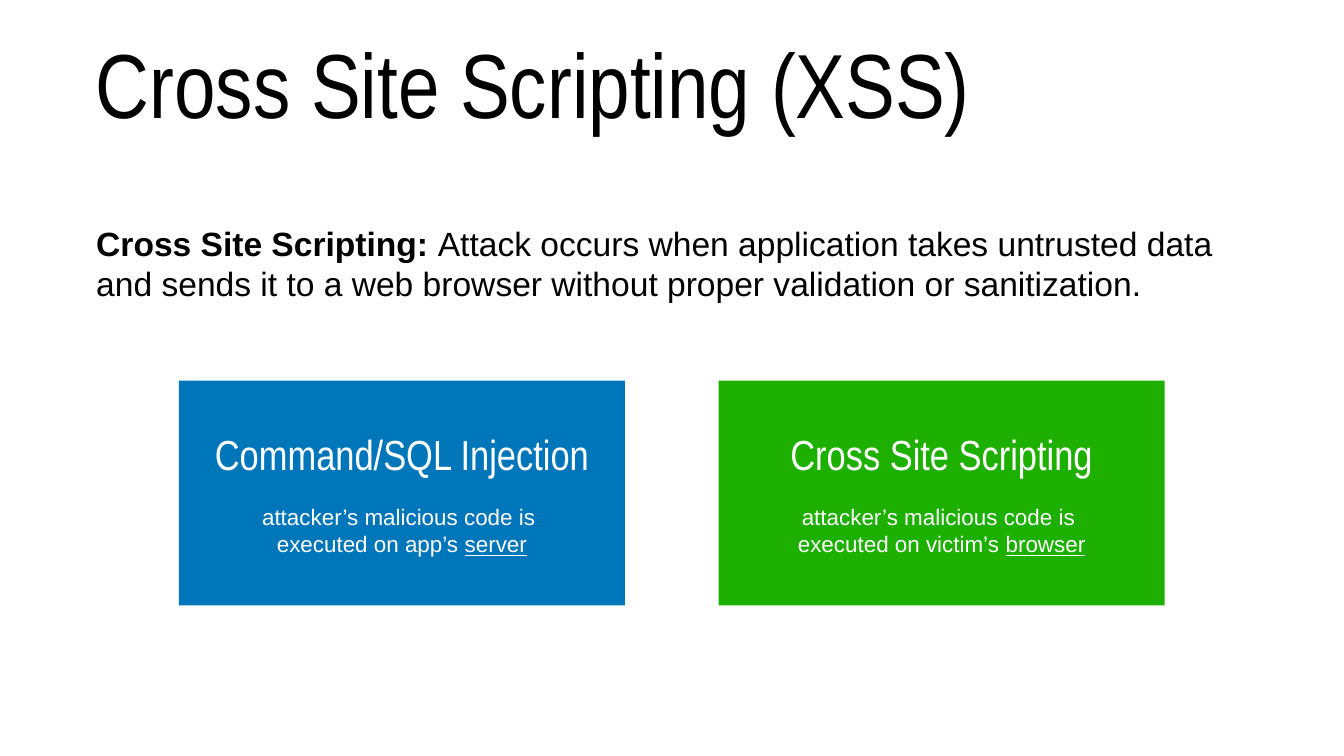
from pptx import Presentation
from pptx.dml.color import RGBColor
from pptx.enum.shapes import MSO_SHAPE
from pptx.enum.text import MSO_ANCHOR, PP_ALIGN
from pptx.util import Pt

PX = 9144
RECT = MSO_SHAPE.RECTANGLE
MIDDLE = MSO_ANCHOR.MIDDLE
CENTER = PP_ALIGN.CENTER
BLACK = RGBColor(0, 0, 0)
WHITE = RGBColor(255, 255, 255)
BLUE = RGBColor(0, 118, 186)
GREEN = RGBColor(30, 176, 1)
SANS = "Arial"
NARROW = "Arial Narrow"


def set_frame(shape, inset):
    frame = shape.text_frame
    frame.word_wrap = True
    frame.vertical_anchor = MIDDLE
    frame.margin_left = frame.margin_right = inset * PX
    frame.margin_top = frame.margin_bottom = inset * PX
    return frame


def add_run(para, text, size, face, color, bold=False, under=False):
    run = para.add_run()
    run.text = text
    font = run.font
    font.size = Pt(size)
    font.name = face
    font.color.rgb = color
    if bold:
        font.bold = True
    if under:
        font.underline = True


deck = Presentation()
deck.slide_width = 2667 * PX
deck.slide_height = 1500 * PX
slide = deck.slides.add_slide(deck.slide_layouts[6])

title = slide.shapes.add_textbox(184 * PX, 37 * PX, 2297 * PX, 250 * PX)
para = set_frame(title, 6).paragraphs[0]
add_run(para, "Cross Site Scripting (XSS)", 130, NARROW, BLACK)

body = slide.shapes.add_textbox(185 * PX, 384 * PX, 2297 * PX, 275 * PX)
para = set_frame(body, 6).paragraphs[0]
para.space_before = Pt(6)
add_run(para, "Cross Site Scripting: ", 48, SANS, BLACK, bold=True)
add_run(
    para,
    "Attack occurs when application takes untrusted data and sends it "
    "to a web browser without proper validation or sanitization.",
    48, SANS, BLACK,
)

cards = [
    ("Command/SQL Injection", "executed on app’s ", "server", BLUE),
    ("Cross Site Scripting", "executed on victim’s ", "browser", GREEN),
]
for i, (head, place, target, fill) in enumerate(cards):
    card = slide.shapes.add_shape(
        RECT, (355 + i * 1071) * PX, 755 * PX, 885 * PX, 446 * PX
    )
    card.shadow.inherit = False
    card.fill.solid()
    card.fill.fore_color.rgb = fill
    card.line.fill.background()
    frame = set_frame(card, 0)
    para = frame.paragraphs[0]
    para.alignment = CENTER
    add_run(para, head, 60, NARROW, WHITE)
    para = frame.add_paragraph()
    para.alignment = CENTER
    para.space_before = Pt(35)
    add_run(para, "attacker’s malicious code is ", 32, SANS, WHITE)
    para.add_line_break()
    add_run(para, place, 32, SANS, WHITE)
    add_run(para, target, 32, SANS, WHITE, under=True)

deck.save("out.pptx")
